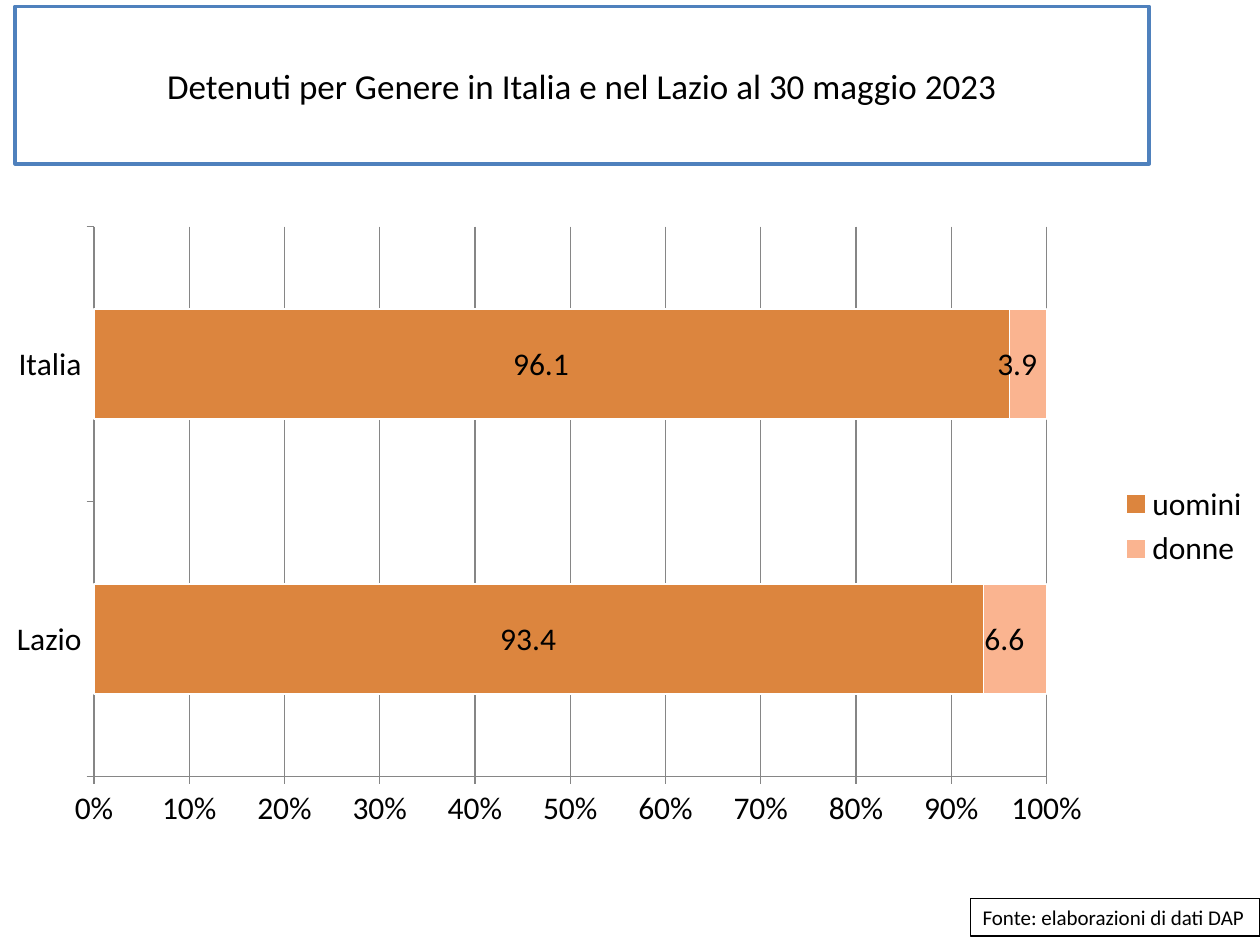
import pptx
import pptx.chart.data
import pptx.util
from dataclasses import dataclass
from lxml import etree
from pptx.dml.color import RGBColor
from pptx.enum.chart import XL_CHART_TYPE, XL_LABEL_POSITION, XL_LEGEND_POSITION, XL_TICK_MARK
from pptx.enum.shapes import MSO_SHAPE
from pptx.enum.text import MSO_ANCHOR, MSO_AUTO_SIZE, PP_ALIGN
from pptx.oxml.ns import qn


@dataclass(frozen=True)
class Theme:
    font: str = "Calibri"
    text: str = "000000"
    paper: str = "FFFFFF"
    title_border: str = "4F81BD"
    grid: str = "868686"
    men: str = "DC853E"
    women: str = "FAB490"
    title_size: int = 20
    chart_size: int = 18
    source_size: int = 12


THEME = Theme()
SLIDE_WIDTH, SLIDE_HEIGHT = 10, 7.5

# Boxes: left, top, width, height in inches
TITLE_BOX = (0.12, 0.05, 9, 1.25)
CHART_BOX = (-0.06, 1.7, 10.08, 4.96)
SOURCE_BOX = (7.7, 7.13, 2.3, 0.3)

# Plot area as shares of the chart box
PLOT_SHARES = {"x": 0.08, "y": 0.02, "w": 0.75, "h": 0.88}


def inches(box):
    return [pptx.util.Inches(length) for length in box]


def color(value):
    return RGBColor.from_string(value)


def style_font(font, size):
    font.name = THEME.font
    font.size = pptx.util.Pt(size)
    font.bold = False
    font.color.rgb = color(THEME.text)


def style_line(line, value, width):
    line.color.rgb = color(value)
    line.width = pptx.util.Pt(width)


def fill_frame(shape, text, size, border, border_width, align):
    """White bordered box holding one line of text."""
    shape.fill.solid()
    shape.fill.fore_color.rgb = color(THEME.paper)
    style_line(shape.line, border, border_width)
    frame = shape.text_frame
    frame.text = text
    frame.vertical_anchor = MSO_ANCHOR.MIDDLE
    paragraph = frame.paragraphs[0]
    paragraph.alignment = align
    style_font(paragraph.runs[0].font, size)


def add_title(slide, box):
    title = slide.shapes.title
    title.left, title.top, title.width, title.height = inches(box)
    fill_frame(title, "Detenuti per Genere in Italia e nel Lazio al 30 maggio 2023",
               THEME.title_size, THEME.title_border, 2, PP_ALIGN.CENTER)


def add_source(slide, box):
    source = slide.shapes.add_shape(MSO_SHAPE.RECTANGLE, *inches(box))
    source.shadow.inherit = False
    fill_frame(source, "Fonte: elaborazioni di dati DAP",
               THEME.source_size, THEME.text, 0.75, PP_ALIGN.LEFT)
    source.text_frame.word_wrap = False
    source.text_frame.auto_size = MSO_AUTO_SIZE.SHAPE_TO_FIT_TEXT


def place_plot(chart, shares):
    """Fix the inner plot area, which python-pptx leaves automatic."""
    plot_area = chart.plots[0]._element.getparent()
    layout = plot_area.find(qn("c:layout"))
    if layout is None:
        layout = etree.Element(qn("c:layout"))
        plot_area.insert(0, layout)
    manual = etree.SubElement(layout, qn("c:manualLayout"))
    settings = {"layoutTarget": "inner", "xMode": "edge", "yMode": "edge", **shares}
    for tag, value in settings.items():
        etree.SubElement(manual, qn(f"c:{tag}")).set("val", str(value))


def add_gender_chart(slide, box):
    shares = pptx.chart.data.CategoryChartData()
    shares.categories = ["Lazio", "Italia"]
    shares.add_series("uomini", (93.4, 96.1))
    shares.add_series("donne", (6.6, 3.9))
    chart = slide.shapes.add_chart(
        XL_CHART_TYPE.BAR_STACKED_100, *inches(box), shares).chart
    chart.has_title = False
    style_font(chart.font, THEME.chart_size)
    place_plot(chart, PLOT_SHARES)

    # Bars and their values
    bars = chart.plots[0]
    bars.gap_width, bars.overlap = 150, 100
    bars.vary_by_categories = False
    for gender, fill in zip(bars.series, (THEME.men, THEME.women)):
        gender.format.fill.solid()
        gender.format.fill.fore_color.rgb = color(fill)
        style_line(gender.format.line, THEME.paper, 0.75)
        labels = gender.data_labels
        labels.show_value = True
        labels.position = XL_LABEL_POSITION.CENTER
        labels.number_format = "0.0_€_-"
        labels.number_format_is_linked = False
        style_font(labels.font, THEME.chart_size)

    # Axes
    for axis in (chart.category_axis, chart.value_axis):
        axis.major_tick_mark = XL_TICK_MARK.OUTSIDE
        axis.minor_tick_mark = XL_TICK_MARK.NONE
        style_line(axis.format.line, THEME.grid, 0.75)
        style_font(axis.tick_labels.font, THEME.chart_size)
    percent = chart.value_axis
    percent.minimum_scale, percent.maximum_scale, percent.major_unit = 0, 1, 0.1
    percent.tick_labels.number_format = "0%"
    percent.tick_labels.number_format_is_linked = False
    percent.has_major_gridlines = True
    style_line(percent.major_gridlines.format.line, THEME.grid, 0.75)

    # Legend
    chart.has_legend = True
    chart.legend.position = XL_LEGEND_POSITION.RIGHT
    chart.legend.include_in_layout = False
    style_font(chart.legend.font, THEME.chart_size)


def main():
    deck = pptx.Presentation()
    deck.slide_width = pptx.util.Inches(SLIDE_WIDTH)
    deck.slide_height = pptx.util.Inches(SLIDE_HEIGHT)
    slide = deck.slides.add_slide(deck.slide_layouts.get_by_name("Title Only"))
    add_title(slide, TITLE_BOX)
    add_source(slide, SOURCE_BOX)
    add_gender_chart(slide, CHART_BOX)
    deck.save("out.pptx")


if __name__ == "__main__":
    main()
